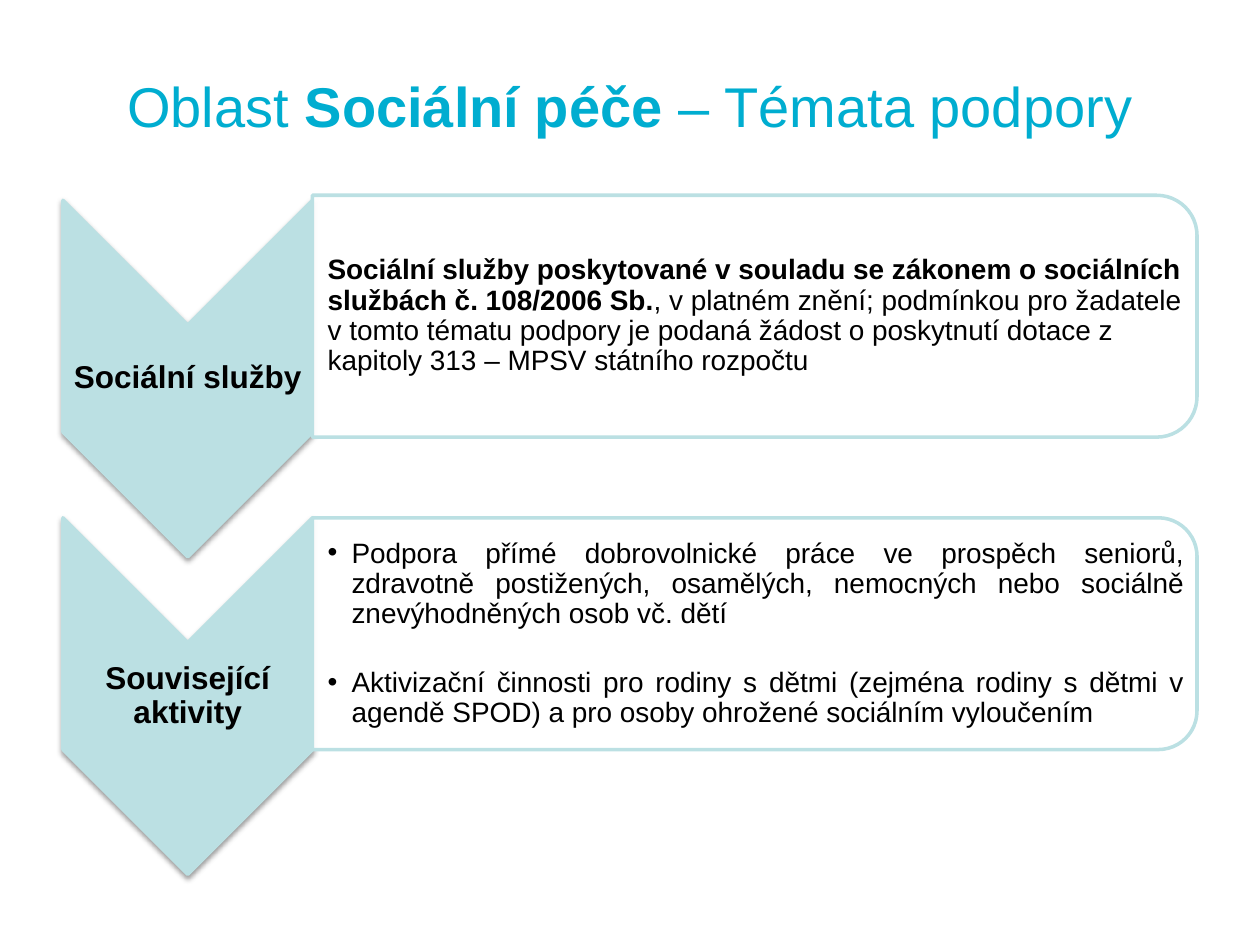
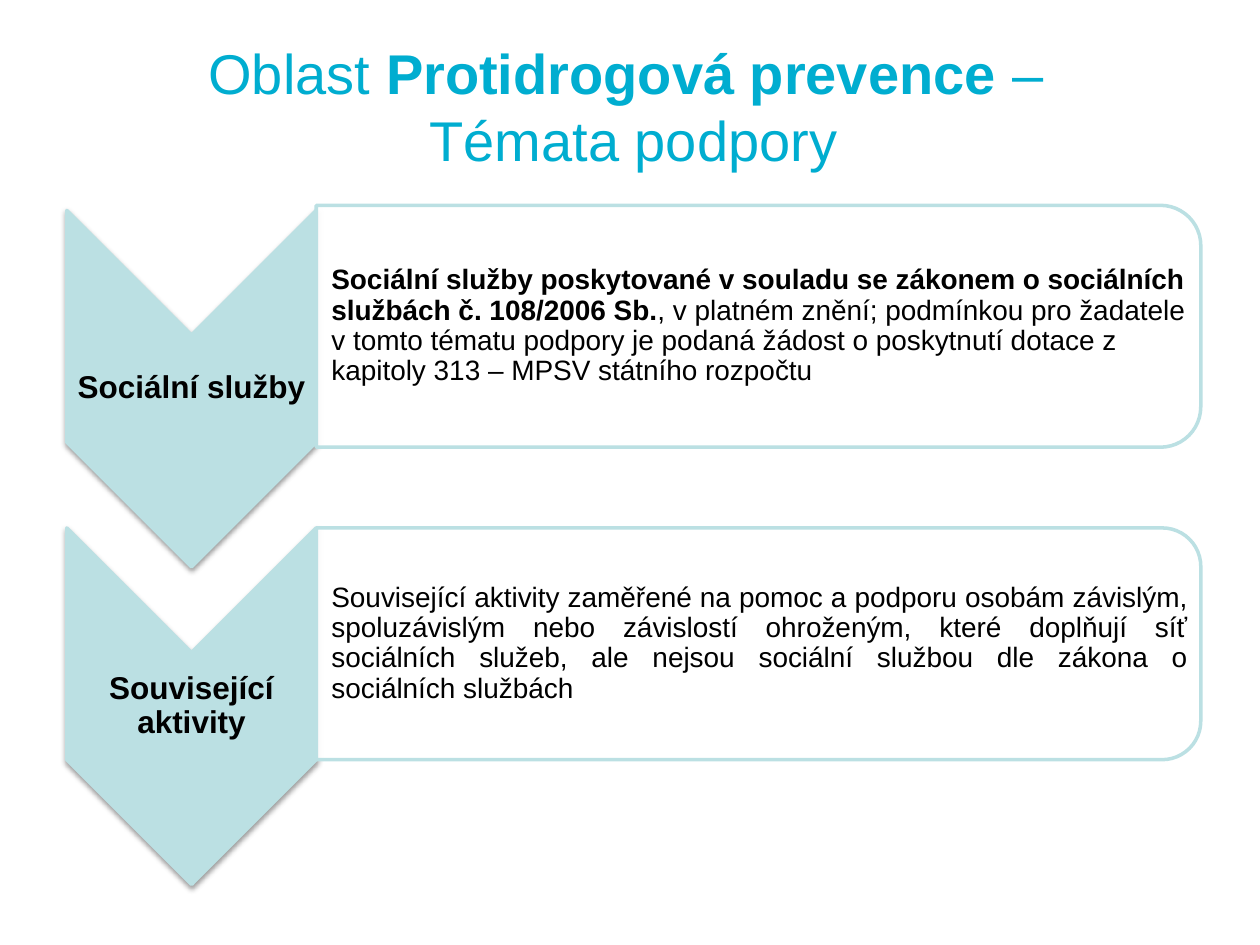
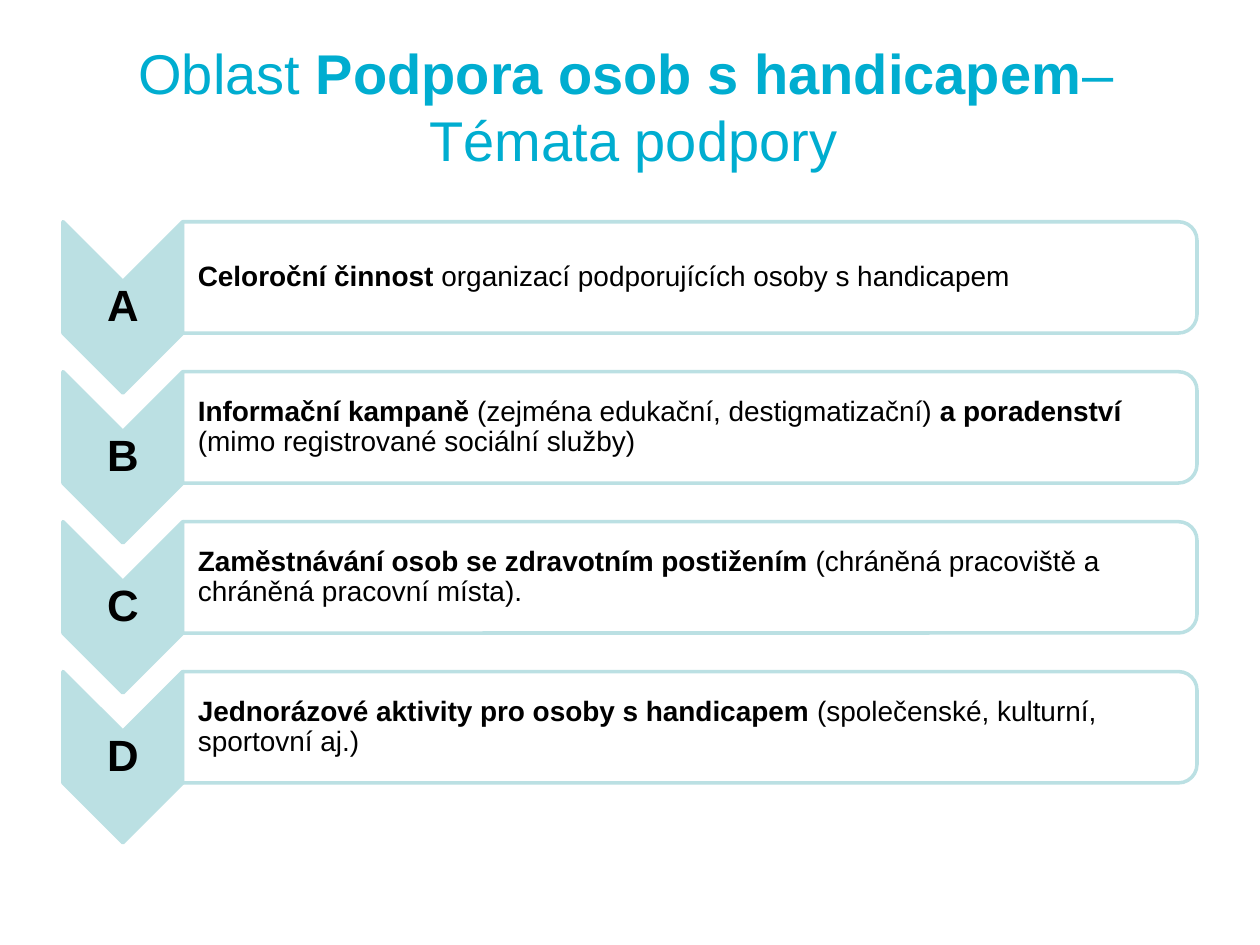
from lxml import etree
from pptx import Presentation
from pptx import util as u
from pptx.dml.color import RGBColor
from pptx.enum import shapes, text
from pptx.oxml import ns

CYAN = RGBColor(0x00, 0xAD, 0xD0)
PALE = RGBColor(0xBB, 0xE0, 0xE3)
WHITE = RGBColor(0xFF, 0xFF, 0xFF)
BLACK = RGBColor(0x00, 0x00, 0x00)
FONT = "Arial"
LEFT, MID, JUST = text.PP_ALIGN.LEFT, text.PP_ALIGN.CENTER, text.PP_ALIGN.JUSTIFY
THEME = "Témata podpory"

LAW = [[("Sociální služby poskytované v souladu se zákonem o sociálních službách č. 108/2006 Sb.", True),
        (", v platném znění; podmínkou pro žadatele v tomto tématu podpory je podaná žádost o poskytnutí "
         "dotace z kapitoly 313 – MPSV státního rozpočtu", False)]]
HELP = [[("Podpora přímé dobrovolnické práce ve prospěch seniorů, zdravotně postižených, osamělých, "
          "nemocných nebo sociálně znevýhodněných osob vč. dětí", False)],
        [("Aktivizační činnosti pro rodiny s dětmi (zejména rodiny s dětmi v agendě SPOD) a pro osoby "
          "ohrožené sociálním vyloučením", False)]]
DRUGS = [[("Související aktivity zaměřené na pomoc a podporu osobám závislým, spoluzávislým nebo závislostí "
           "ohroženým, které doplňují síť sociálních služeb, ale nejsou sociální službou dle zákona "
           "o sociálních službách", False)]]
TOPICS = [
    ("A", [[("Celoroční činnost ", True), ("organizací podporujících osoby s handicapem", False)]]),
    ("B", [[("Informační kampaně", True), (" (zejména edukační, destigmatizační) ", False),
            ("a poradenství", True), (" (mimo registrované sociální služby)", False)]]),
    ("C", [[("Zaměstnávání osob se zdravotním postižením ", True),
            ("(chráněná pracoviště a chráněná pracovní místa).", False)]]),
    ("D", [[("Jednorázové aktivity pro osoby s handicapem ", True),
            ("(společenské, kulturní, sportovní aj.)", False)]]),
]


def sub(node, tag, **attrs):
    """Append a child element with the given attributes."""
    return etree.SubElement(node, ns.qn(tag), {k: str(v) for k, v in attrs.items()})


def bullet(para):
    """Give a paragraph a hanging bullet."""
    props = para._p.get_or_add_pPr()
    props.set("marL", str(u.Inches(0.19)))
    props.set("indent", str(-u.Inches(0.19)))
    sub(props, "a:buFont", typeface=FONT)
    sub(props, "a:buChar", char="•")


def write(slide, box, paras, size, color=BLACK, align=LEFT, inset=None, space=0.9, dots=False):
    """Write paragraphs of (words, bold) runs in a vertically centred text box."""
    frame = slide.shapes.add_textbox(*map(u.Inches, box)).text_frame
    frame.word_wrap = True
    frame.vertical_anchor = text.MSO_ANCHOR.MIDDLE
    if inset is not None:
        frame.margin_left = u.Inches(inset)
        frame.margin_top = frame.margin_right = frame.margin_bottom = u.Inches(0.01)
    for i, runs in enumerate(paras):
        para = frame.add_paragraph() if i else frame.paragraphs[0]
        para.alignment = align
        para.line_spacing = space
        if i:
            para.space_before = u.Pt(22)
        if dots:
            bullet(para)
        for words, bold in runs:
            if words == "\n":
                para.add_line_break()
                continue
            run = para.add_run()
            run.text = words
            font = run.font
            font.name, font.size, font.bold = FONT, u.Pt(size), bold
            font.color.rgb = color


def turned(slide, kind, box, fill):
    """Add a shape turned a quarter clockwise so that it fills the box."""
    x, y, w, h = box
    place = x + (w - h) / 2, y + (h - w) / 2, h, w
    shape = slide.shapes.add_shape(kind, *map(u.Inches, place))
    shape.rotation = 90
    shape.fill.solid()
    shape.fill.fore_color.rgb = fill
    shape.line.color.rgb = PALE
    shape.line.width = u.Pt(2)
    shape.shadow.inherit = False
    return shape


def arrow(slide, box, label, size, shade):
    """Draw a downward chevron with its label."""
    x, y, w, h = box
    shape = turned(slide, shapes.MSO_SHAPE.CHEVRON, box, PALE)
    if shade:
        effect = shape.element.spPr.find(ns.qn("a:effectLst"))
        drop = sub(effect, "a:outerShdw", blurRad=u.Pt(3.1), dist=u.Pt(1.6), dir=5400000, rotWithShape=0)
        sub(sub(drop, "a:srgbClr", val=BLACK), "a:alpha", val=38000)
    write(slide, (x, y + w / 2, w, h - w), [[(label, True)]], size, align=MID, inset=0.01)


def panel(slide, box, paras, align):
    """Draw a panel with round right corners and its text."""
    x, y, w, h = box
    shape = turned(slide, shapes.MSO_SHAPE.ROUND_2_SAME_RECTANGLE, box, WHITE)
    tint = shape.element.spPr.find(ns.qn("a:solidFill"))[0]
    sub(tint, "a:alpha", val=90000)
    pad = 0.05 * h
    write(slide, (x, y + pad, w - pad, h - 2 * pad), paras, 16, align=align, inset=0.12, dots=len(paras) > 1)


def row(slide, box, tip, topic, size, align=LEFT, extra=0.0, shade=False):
    """Place a chevron of tip size and the panel to its right."""
    x, y, w = box
    wide, high = tip
    label, paras = topic
    tall = 0.65 * high
    arrow(slide, (x, y, wide, high), label, size, shade)
    panel(slide, (x + wide, y - extra / 2, w - wide, tall + extra), paras, align)


def title(slide, x, runs):
    """Write the slide title."""
    write(slide, (x, 0.21, 9.5, 1.25), [runs], 32, CYAN, MID, space=1.0)


def pair(slide, x, y, paras):
    """Stack the services row and the related activities row."""
    tip = 1.98, 2.83
    row(slide, (x, y, 9), tip, ("Sociální služby", LAW), 18, extra=0.08, shade=True)
    row(slide, (x, y + 2.52, 9), tip, ("Související aktivity", paras), 18, JUST, shade=True)


def care(slide):
    """Build the social care slide."""
    title(slide, 0.25, [("Oblast ", False), ("Sociální péče ", True), ("– " + THEME, False)])
    pair(slide, 0.5, 1.59, HELP)


def drugs(slide):
    """Build the drug prevention slide."""
    title(slide, 0.28, [("Oblast ", False), ("Protidrogová prevence ", True), ("– ", False),
                        ("\n", False), (THEME, False)])
    pair(slide, 0.53, 1.67, DRUGS)


def support(slide):
    """Build the handicap support slide."""
    title(slide, 0.28, [("Oblast ", False), ("Podpora osob s handicapem", True), ("– ", False),
                        ("\n", False), (THEME, False)])
    for i, topic in enumerate(TOPICS):
        row(slide, (0.5, 1.76 + 1.19 * i, 9), (0.95, 1.36), topic, 25)


def main():
    """Build and save the deck."""
    deck = Presentation()
    deck.slide_width, deck.slide_height = u.Inches(10), u.Inches(7.5)
    for build in (care, drugs, support):
        build(deck.slides.add_slide(deck.slide_layouts[6]))
    deck.save("out.pptx")


if __name__ == "__main__":
    main()
